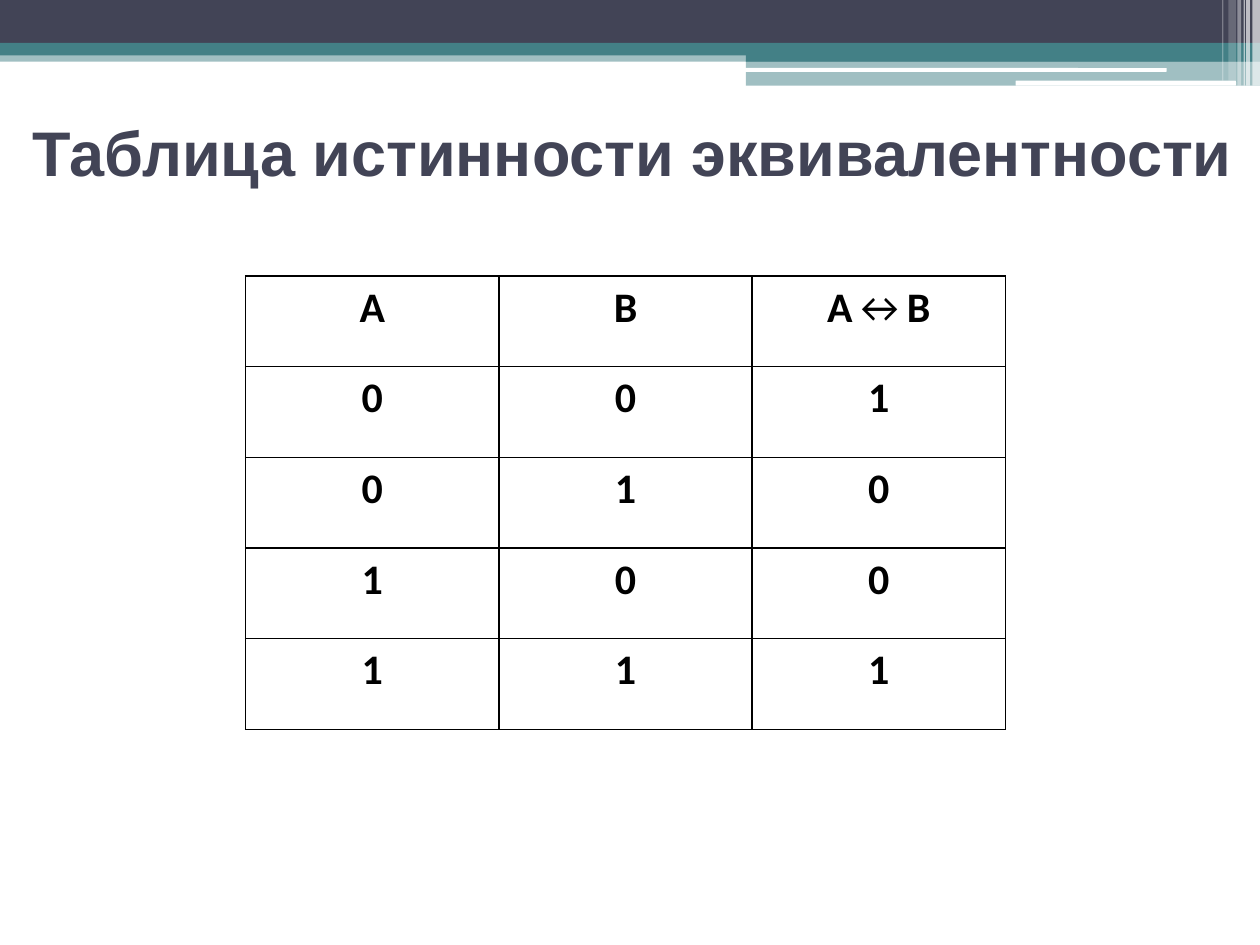
from lxml.etree import SubElement
from pptx import Presentation
from pptx.dml.color import RGBColor
from pptx.enum.shapes import MSO_SHAPE
from pptx.enum.text import MSO_ANCHOR, MSO_AUTO_SIZE, PP_ALIGN
from pptx.oxml.ns import qn
from pptx.util import Inches, Pt

COLORS = {"dark": "424456", "teal": "438086", "white": "FFFFFF", "black": "000000"}
TITLE = "Таблица истинности эквивалентности"
HEADER = ["А", "В", "А↔В"]
TRUTH_ROWS = [(a, b, int(a == b)) for a in (0, 1) for b in (0, 1)]

# left, top, width, height, colour, opacity in percent
BANDS = [
    (0, 0.4, 10, 0.09, "teal", 50),
    (0, 0, 10, 0.34, "dark", 100),
    (0, 0.34, 10, 0.1, "teal", 100),
    (5.92, 0.39, 4.08, 0.1, "teal", 100),
    (5.92, 0.48, 4.08, 0.2, "teal", 50),
]
ROUNDED_LINES = [
    (5.91, 0.54, 3.35, 0.03, "white", 100),
    (8.06, 0.64, 1.75, 0.04, "white", 100),
]
# left, width, height, opacity in percent
STRIPES = [
    (9.94, 0.06, 0.68, 65), (9.89, 0.03, 0.68, 65), (9.87, 0.01, 0.68, 60),
    (9.82, 0.03, 0.68, 40), (9.75, 0.06, 0.64, 20), (9.7, 0.01, 0.64, 30),
]
TABLE_LEFT, TABLE_TOP = 1.95, 2.19
COL_WIDTH, ROW_HEIGHT = 2.01, 0.72
HANGING = 0.38


def add_bar(s, left, top, width, height, color, opacity, kind=MSO_SHAPE.RECTANGLE):
    bar = s.shapes.add_shape(kind, *map(Inches, (left, top, width, height)))
    bar.shadow.inherit = False
    bar.line.fill.background()
    bar.fill.solid()
    bar.fill.fore_color.rgb = RGBColor.from_string(COLORS[color])
    if opacity < 100:
        rgb = bar.fill._xPr.find(".//" + qn("a:srgbClr"))
        SubElement(rgb, qn("a:alpha"), val=str(opacity * 1000))


def add_text(p, text, size=24, font="Calibri", color="black", bold=True):
    r = p.add_run()
    r.text = text
    r.font.size, r.font.name, r.font.bold = Pt(size), font, bold
    r.font.color.rgb = RGBColor.from_string(COLORS[color])


def set_borders(cell, color="black", width=1):
    tcPr = cell._tc.get_or_add_tcPr()
    for i, side in enumerate(("lnL", "lnR", "lnT", "lnB")):
        ln = tcPr.makeelement(qn("a:" + side), {"w": str(Pt(width))})
        fill = SubElement(ln, qn("a:solidFill"))
        SubElement(fill, qn("a:srgbClr"), val=COLORS[color])
        tcPr.insert(i, ln)


def add_truth_table(s):
    rows = [HEADER, *TRUTH_ROWS]
    n_rows, n_cols = len(rows), len(HEADER)
    table = s.shapes.add_table(
        n_rows, n_cols, Inches(TABLE_LEFT), Inches(TABLE_TOP),
        Inches(COL_WIDTH * n_cols), Inches(ROW_HEIGHT * n_rows)).table
    table.first_row = table.horz_banding = False
    for i, row in enumerate(rows):
        for j, value in enumerate(row):
            cell = table.cell(i, j)
            cell.fill.background()
            set_borders(cell)
            p = cell.text_frame.paragraphs[0]
            p.alignment = PP_ALIGN.CENTER
            pPr = p._p.get_or_add_pPr()
            pPr.set("marL", str(Inches(HANGING)))
            pPr.set("indent", str(-Inches(HANGING)))
            before, arrow, after = str(value).partition("↔")
            for text in filter(None, (before, arrow, after)):
                add_text(p, text, bold=text != "↔")


def main():
    prs = Presentation()
    prs.slide_width, prs.slide_height = Inches(10), Inches(7.5)
    s = prs.slides.add_slide(prs.slide_layouts[5])

    for band in BANDS:
        add_bar(s, *band)
    for line in ROUNDED_LINES:
        add_bar(s, *line, kind=MSO_SHAPE.ROUNDED_RECTANGLE)
    for left, width, height, opacity in STRIPES:
        add_bar(s, left, 0, width, height, "white", opacity)

    title = s.shapes.title
    title.left, title.top, title.width, title.height = map(Inches, (0.16, 0.58, 10, 1.25))
    tf = title.text_frame
    tf.word_wrap, tf.auto_size = True, MSO_AUTO_SIZE.NONE
    tf.vertical_anchor = MSO_ANCHOR.MIDDLE
    p = tf.paragraphs[0]
    p.alignment = PP_ALIGN.LEFT
    add_text(p, TITLE, size=36, font="Arial", color="dark")

    add_truth_table(s)
    prs.save("out.pptx")


if __name__ == "__main__":
    main()
